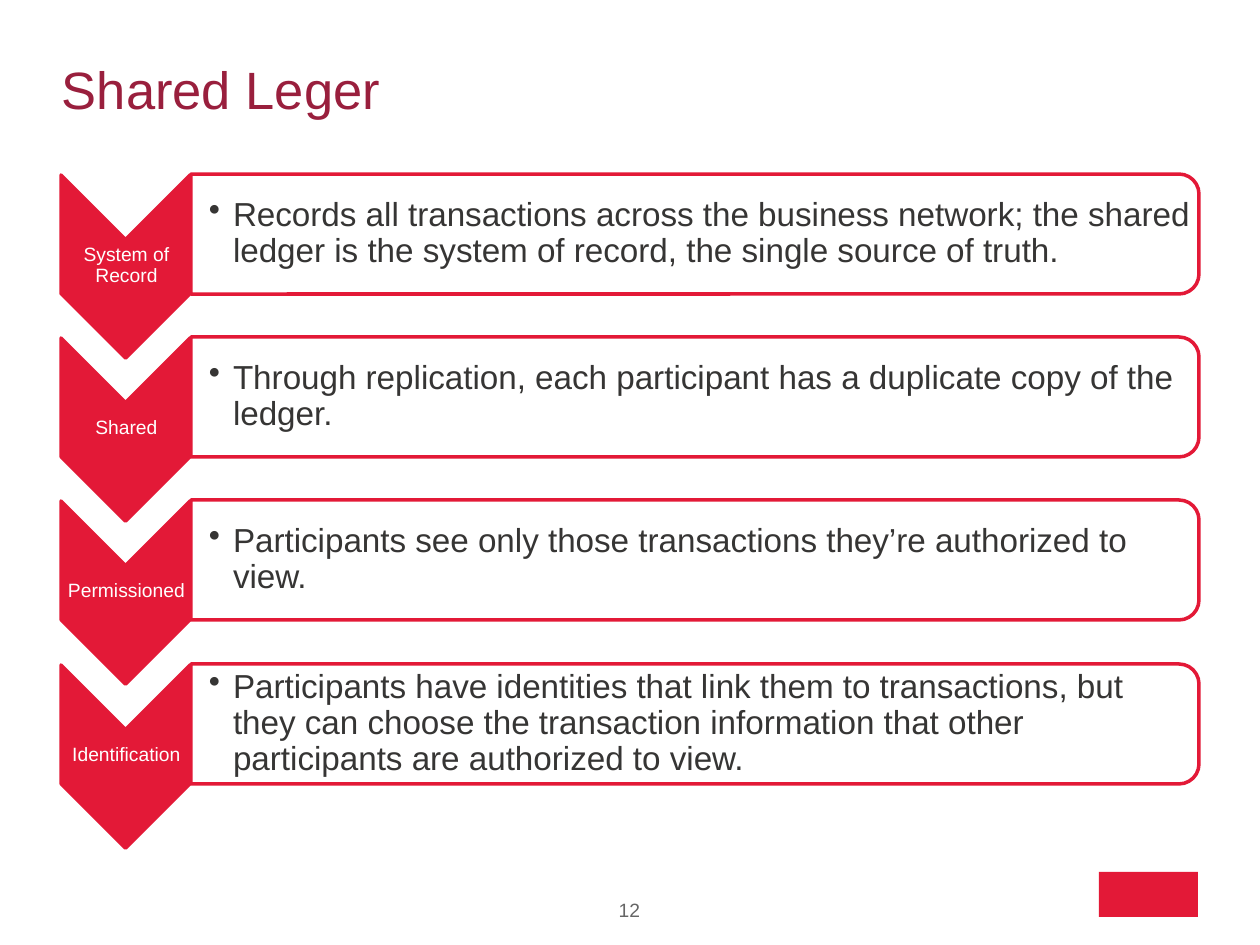
from lxml import etree
from pptx import Presentation
from pptx.dml.color import RGBColor
from pptx.enum.shapes import MSO_SHAPE
from pptx.enum.text import MSO_ANCHOR, PP_ALIGN
from pptx.oxml.ns import qn
from pptx.util import Emu, Pt

CHEVRON, PANEL = MSO_SHAPE.CHEVRON, MSO_SHAPE.ROUND_2_SAME_RECTANGLE
RECTANGLE = MSO_SHAPE.RECTANGLE
TOP, MIDDLE = MSO_ANCHOR.TOP, MSO_ANCHOR.MIDDLE
LEFT, CENTER = PP_ALIGN.LEFT, PP_ALIGN.CENTER

PX = 914400 / 126
COLORS = {"red": "E31937", "title": "991F3D", "body": "363534",
          "number": "666666", "white": "FFFFFF"}
ROWS = [
    ("System of Record", "Records all transactions across the business network; "
     "the shared ledger is the system of record, the single source of truth."),
    ("Shared", "Through replication, each participant has a duplicate copy of the ledger."),
    ("Permissioned", "Participants see only those transactions they’re authorized to view."),
    ("Identification", "Participants have identities that link them to transactions, "
     "but they can choose the transaction information that other participants "
     "are authorized to view."),
]


def add_shape(kind, bounds, fill, rotation=0):
    shape = page.shapes.add_shape(kind, *[Emu(round(v * PX)) for v in bounds])
    shape.rotation = rotation
    shape.shadow.inherit = False
    shape.fill.solid()
    shape.fill.fore_color.rgb = RGBColor.from_string(COLORS[fill])
    shape.line.color.rgb = RGBColor.from_string(COLORS["red"])
    shape.line.width = Pt(2)
    return shape


def add_text(text, bounds, size, color, align=LEFT, anchor=MIDDLE, inset=0, left_inset=0):
    box = page.shapes.add_textbox(*[Emu(round(v * PX)) for v in bounds])
    frame = box.text_frame
    frame.word_wrap = True
    frame.vertical_anchor = anchor
    frame.margin_top = frame.margin_right = frame.margin_bottom = Emu(round(inset * PX))
    frame.margin_left = Emu(round(left_inset * PX))
    frame.text = text
    para = frame.paragraphs[0]
    para.alignment = align
    span = para.runs[0]
    span.font.name = "Arial"
    span.font.size = Pt(size)
    span.font.color.rgb = RGBColor.from_string(COLORS[color])
    return para


deck = Presentation()
deck.slide_width, deck.slide_height = Emu(round(1260 * PX)), Emu(round(945 * PX))
page = deck.slides.add_slide(deck.slide_layouts[6])

# Plain block in the logo's place
mark = add_shape(RECTANGLE, (1099, 872, 99, 45), "red")
mark.line.fill.background()

# Title and slide number
add_text("Shared Leger", (62, 25, 1135, 127), 30, "title")
add_text("12", (576, 898, 107, 33), 11, "number", CENTER, TOP)

# Rows: a chevron pointing down and a panel rounded on the right
for row, (label, statement) in enumerate(ROWS):
    top = 174 + row * 490 // 3

    add_shape(CHEVRON, (34, top + 28, 183, 129), "red", 90)
    para = add_text(label, (62, top + 64, 129, 55), 11, "white", CENTER, inset=1, left_inset=1)
    para.line_spacing = 0.9

    panel = add_shape(PANEL, (635, top - 444, 120, 1008), "white", 90)
    color = panel.fill._xPr.find(qn("a:solidFill"))[0]
    etree.SubElement(color, qn("a:alpha"), val="90000")

    para = add_text(statement, (190, top + 6, 1003, 107), 19, "body", inset=1, left_inset=19)
    para.line_spacing = 0.9
    properties = para._p.get_or_add_pPr()
    properties.set("marL", str(round(24 * PX)))
    properties.set("indent", str(round(-24 * PX)))
    etree.SubElement(properties, qn("a:buChar"), char="•")

deck.save("out.pptx")
